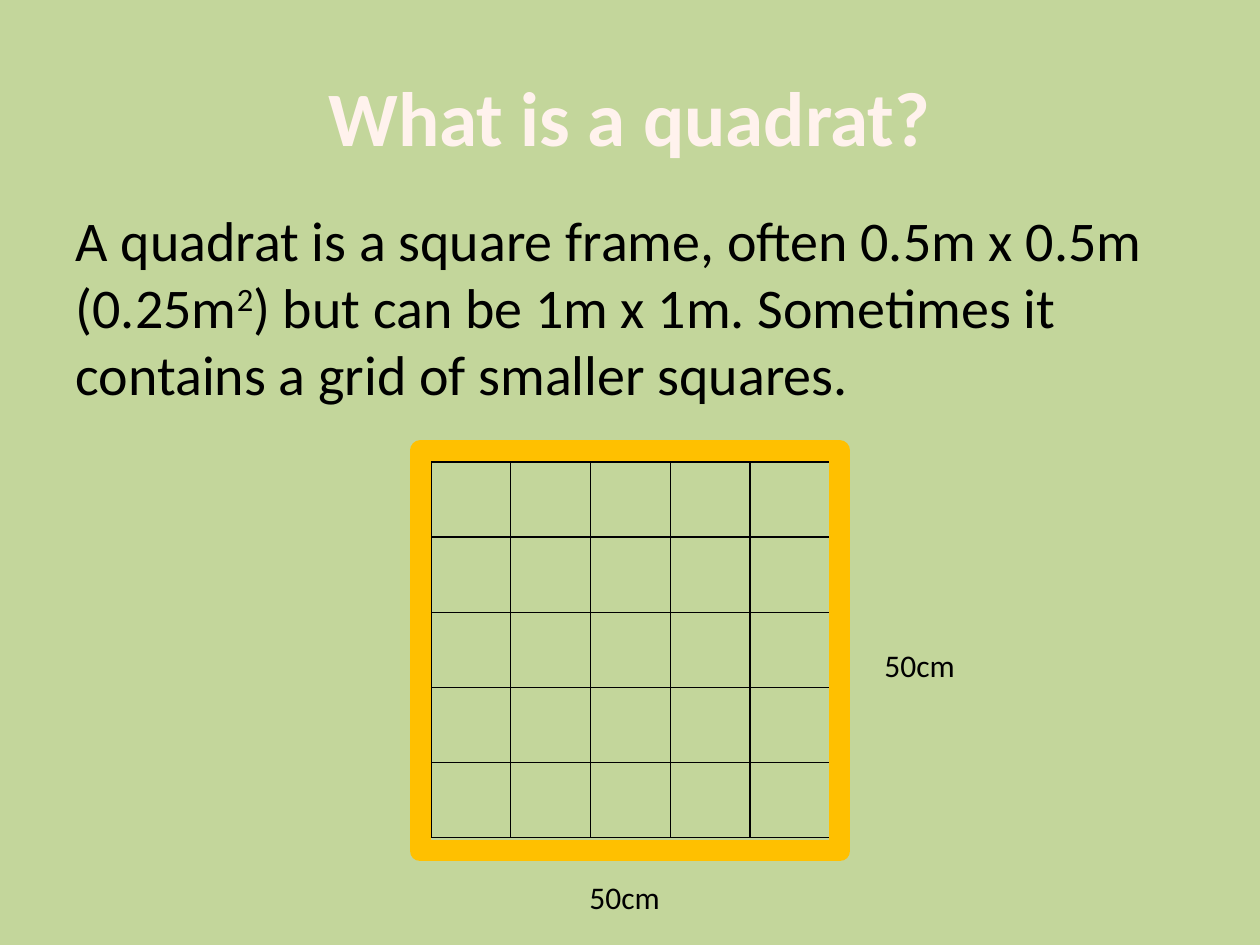
from pptx import Presentation
from pptx.dml.color import RGBColor
from pptx.enum.shapes import MSO_SHAPE
from pptx.enum.text import MSO_ANCHOR, MSO_AUTO_SIZE, PP_ALIGN
from pptx.oxml.ns import qn
from pptx.util import Pt
from lxml.etree import SubElement

TITLE = "What is a quadrat?"
BODY = [
    ("A quadrat is a square frame, often 0.5m x 0.5m (0.25m", False),
    ("2", True),
    (") but can be 1m x 1m. Sometimes it contains a grid of smaller squares.", False),
]
LABELS = [("50cm", 872, 640), ("50cm", 577, 872)]
COLORS = {"background": "C3D69B", "title": "FFF2ED", "text": "000000",
          "grid": "000000", "frame": "FFC000"}
FONT = "Calibri"
PX = 914400 // 126
TITLE_BOX = (63, 63, 1134, 106)
BODY_BOX = (63, 199, 1134, 645)
GRID_BOX = (431, 462, 399, 376)
FRAME_BOX = (420, 451, 420, 400)
LABEL_SIZE = (97, 50)
GRID_COUNT = 5


def emu(box):
    return [v * PX for v in box]


def color(name):
    return RGBColor.from_string(COLORS[name])


def place(shape, box):
    shape.left, shape.top, shape.width, shape.height = emu(box)


def style(r, size, name, bold=False):
    r.font.name, r.font.size, r.font.bold = FONT, Pt(size), bold
    r.font.color.rgb = color(name)


def add_borders(cell):
    tcPr = cell._tc.get_or_add_tcPr()
    for index, side in enumerate(("lnL", "lnR", "lnT", "lnB")):
        ln = tcPr.makeelement(qn(f"a:{side}"), {"w": str(Pt(1))})
        tcPr.insert(index, ln)
        fill = SubElement(ln, qn("a:solidFill"))
        SubElement(fill, qn("a:srgbClr"), val=COLORS["grid"])


def add_title(s):
    title = s.shapes.title
    place(title, TITLE_BOX)
    tf = title.text_frame
    tf.text = TITLE
    tf.vertical_anchor = MSO_ANCHOR.MIDDLE
    p = tf.paragraphs[0]
    p.alignment = PP_ALIGN.CENTER
    style(p.runs[0], 44, "title", bold=True)


def add_body(s):
    body = s.placeholders[1]
    place(body, BODY_BOX)
    p = body.text_frame.paragraphs[0]
    pPr = p._p.get_or_add_pPr()
    pPr.set("marL", "0")
    pPr.set("indent", "0")
    SubElement(pPr, qn("a:buNone"))
    for text, raised in BODY:
        r = p.add_run()
        r.text = text
        style(r, 32, "text")
        if raised:
            r._r.get_or_add_rPr().set("baseline", "30000")


def add_quadrat(s):
    table = s.shapes.add_table(GRID_COUNT, GRID_COUNT, *emu(GRID_BOX)).table
    table.first_row = table.horz_banding = False
    for cell in table.iter_cells():
        cell.fill.background()
        add_borders(cell)
    frame = s.shapes.add_shape(MSO_SHAPE.RECTANGLE, *emu(FRAME_BOX))
    frame.shadow.inherit = False
    frame.fill.background()
    frame.line.color.rgb = color("frame")
    frame.line.width = Pt(12)


def add_labels(s):
    for text, x, y in LABELS:
        tf = s.shapes.add_textbox(*emu((x, y, *LABEL_SIZE))).text_frame
        tf.text = text
        tf.word_wrap = False
        tf.auto_size = MSO_AUTO_SIZE.SHAPE_TO_FIT_TEXT
        style(tf.paragraphs[0].runs[0], 18, "text")


def main():
    prs = Presentation()
    prs.slide_width, prs.slide_height = emu((1260, 945))
    s = prs.slides.add_slide(prs.slide_layouts[1])
    s.background.fill.solid()
    s.background.fill.fore_color.rgb = color("background")
    add_title(s)
    add_body(s)
    add_quadrat(s)
    add_labels(s)
    prs.save("out.pptx")


if __name__ == "__main__":
    main()
